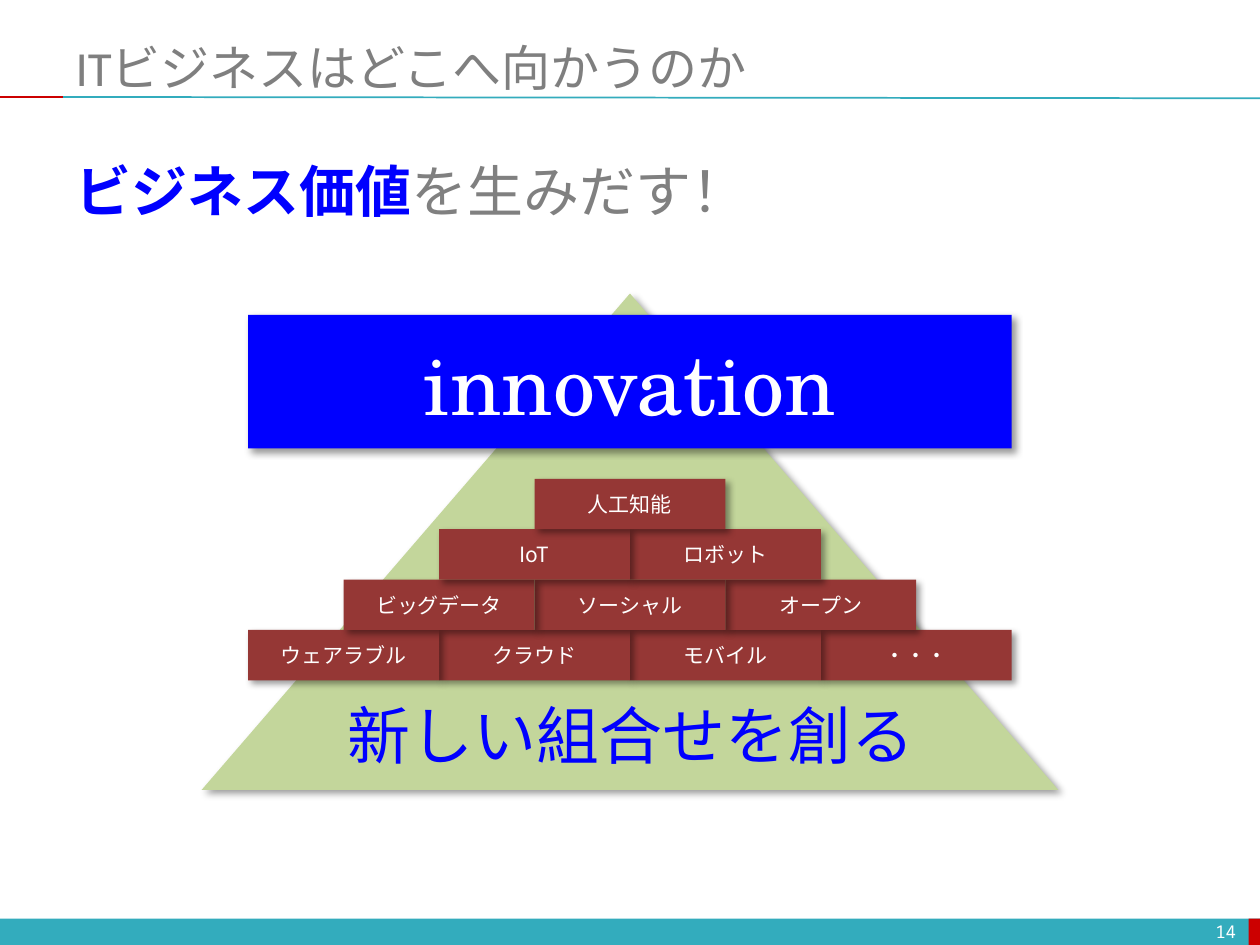
from dataclasses import dataclass

import pptx
import pptx.dml.color
import pptx.enum.shapes
import pptx.enum.text
import pptx.oxml
import pptx.oxml.ns
import pptx.util
from lxml import etree
from pptx.util import Inches

SHAPE = pptx.enum.shapes.MSO_SHAPE
ALIGN = pptx.enum.text.PP_ALIGN
ANCHOR = pptx.enum.text.MSO_ANCHOR
qn = pptx.oxml.ns.qn


@dataclass(frozen=True)
class Theme:
    teal: str = "33ACBD"
    red: str = "CC0000"
    green: str = "C3D69B"
    brick: str = "953735"
    blue: str = "0000FF"
    white: str = "FFFFFF"
    title_gray: str = "7F7F7F"
    text_gray: str = "808080"
    japanese: str = "Noto Sans CJK JP"
    latin: str = "Calibri"
    mono: str = "Noto Sans Mono"
    serif: str = "TeX Gyre Schola"
    title_size: int = 28
    message_size: int = 32
    innovation_size: int = 48
    create_size: int = 36
    brick_size: int = 12
    page_size: int = 10


THEME = Theme()

TECHNOLOGIES = [
    ["ウェアラブル", "クラウド", "モバイル", "・・・"],
    ["ビッグデータ", "ソーシャル", "オープン"],
    ["IoT", "ロボット"],
    ["人工知能"],
]
CENTER = 5
BRICK_WIDTH, BRICK_HEIGHT = 1.515, 0.4
BOTTOM_ROW_TOP = 5


def rgb(color):
    return pptx.dml.color.RGBColor.from_string(color)


def add_text(frame, text, *, size, color, font=THEME.japanese, bold=False,
             align=ALIGN.LEFT, anchor=ANCHOR.MIDDLE, wrap=True):
    """Append a run to the first paragraph of the frame."""
    frame.word_wrap = wrap
    frame.vertical_anchor = anchor
    paragraph = frame.paragraphs[0]
    paragraph.alignment = align
    run = paragraph.add_run()
    run.text = text
    run.font.size = pptx.util.Pt(size)
    run.font.bold = bold
    run.font.name = font
    run.font.color.rgb = rgb(color)
    east_asian = etree.SubElement(run.font._element, qn("a:ea"))
    east_asian.set("typeface", THEME.japanese)


def add_block(slide, kind, left, top, width, height, color, shadow=True):
    block = slide.shapes.add_shape(
        kind, Inches(left), Inches(top), Inches(width), Inches(height))
    block.fill.solid()
    block.fill.fore_color.rgb = rgb(color)
    block.line.fill.background()
    block.shadow.inherit = False
    if shadow:
        effects = block._element.spPr.find(qn("a:effectLst"))
        effects.append(pptx.oxml.parse_xml(
            '<a:outerShdw xmlns:a="http://schemas.openxmlformats.org/drawingml/2006/main"'
            ' blurRad="50800" dist="38100" dir="2700000" algn="tl" rotWithShape="0">'
            '<a:srgbClr val="000000"><a:alpha val="40000"/></a:srgbClr></a:outerShdw>'))
    return block


def add_rule(slide, start, end, color):
    rule = slide.shapes.add_connector(
        pptx.enum.shapes.MSO_CONNECTOR.STRAIGHT,
        *(Inches(value) for value in (*start, *end)))
    rule.line.color.rgb = rgb(color)
    rule.line.width = pptx.util.Pt(1)
    etree.SubElement(rule._element.spPr, qn("a:effectLst"))


def add_label(slide, left, top, width, height):
    label = slide.shapes.add_textbox(
        Inches(left), Inches(top), Inches(width), Inches(height))
    return label.text_frame


def add_frame(slide):
    """Add the footer band, page number and rules under the title."""
    add_block(slide, SHAPE.RECTANGLE, 0, 7.29, 10, 0.22, THEME.teal, shadow=False)
    add_block(slide, SHAPE.RECTANGLE, 9.91, 7.29, 0.1, 0.22, THEME.red, shadow=False)
    add_rule(slide, (0.5, 0.77), (10, 0.78), THEME.teal)
    add_rule(slide, (0, 0.77), (0.5, 0.77), THEME.red)
    add_text(add_label(slide, 7.58, 7.27, 2.33, 0.24), "14", size=THEME.page_size,
             color=THEME.white, font=THEME.mono, align=ALIGN.RIGHT)


def set_title(slide, text):
    title = slide.shapes.title
    title.left, title.top = Inches(0.5), Inches(0.3)
    title.width, title.height = Inches(9.5), Inches(0.46)
    title.text_frame.auto_size = pptx.enum.text.MSO_AUTO_SIZE.NONE
    add_text(title.text_frame, text, size=THEME.title_size,
             color=THEME.title_gray, font=THEME.latin)


def add_message(slide):
    message = add_label(slide, 0.5, 1.19, 5.59, 0.64)
    for text, color, bold in (("ビジネス価値", THEME.blue, True),
                              ("を生みだす！", THEME.text_gray, False)):
        add_text(message, text, size=THEME.message_size, color=color, bold=bold,
                 anchor=ANCHOR.TOP, wrap=False)


def add_bricks(slide):
    """Stack centred rows from the bottom, each laid from right to left."""
    for level, row in enumerate(TECHNOLOGIES):
        row_left = CENTER - len(row) * BRICK_WIDTH / 2
        top = BOTTOM_ROW_TOP - level * BRICK_HEIGHT
        for column, technology in reversed(list(enumerate(row))):
            brick = add_block(slide, SHAPE.RECTANGLE, row_left + column * BRICK_WIDTH,
                              top, BRICK_WIDTH, BRICK_HEIGHT, THEME.brick)
            add_text(brick.text_frame, technology, size=THEME.brick_size,
                     color=THEME.white, align=ALIGN.CENTER)


def add_pyramid(slide):
    add_block(slide, SHAPE.ISOSCELES_TRIANGLE, 1.6, 2.33, 6.8, 3.94, THEME.green)
    add_text(add_label(slide, 2.63, 5.48, 4.75, 0.71), "新しい組合せを創る",
             size=THEME.create_size, color=THEME.blue, align=ALIGN.CENTER,
             anchor=ANCHOR.TOP, wrap=False)
    add_bricks(slide)
    innovation = add_block(slide, SHAPE.RECTANGLE, 1.97, 2.5, 6.06, 1.06, THEME.blue)
    add_text(innovation.text_frame, "innovation", size=THEME.innovation_size,
             color=THEME.white, font=THEME.serif, align=ALIGN.CENTER)


def main():
    presentation = pptx.Presentation()
    presentation.slide_width = Inches(10)
    presentation.slide_height = Inches(7.5)
    slide = presentation.slides.add_slide(presentation.slide_layouts[5])
    add_frame(slide)
    set_title(slide, "ITビジネスはどこへ向かうのか")
    add_message(slide)
    add_pyramid(slide)
    presentation.save("out.pptx")


if __name__ == "__main__":
    main()
